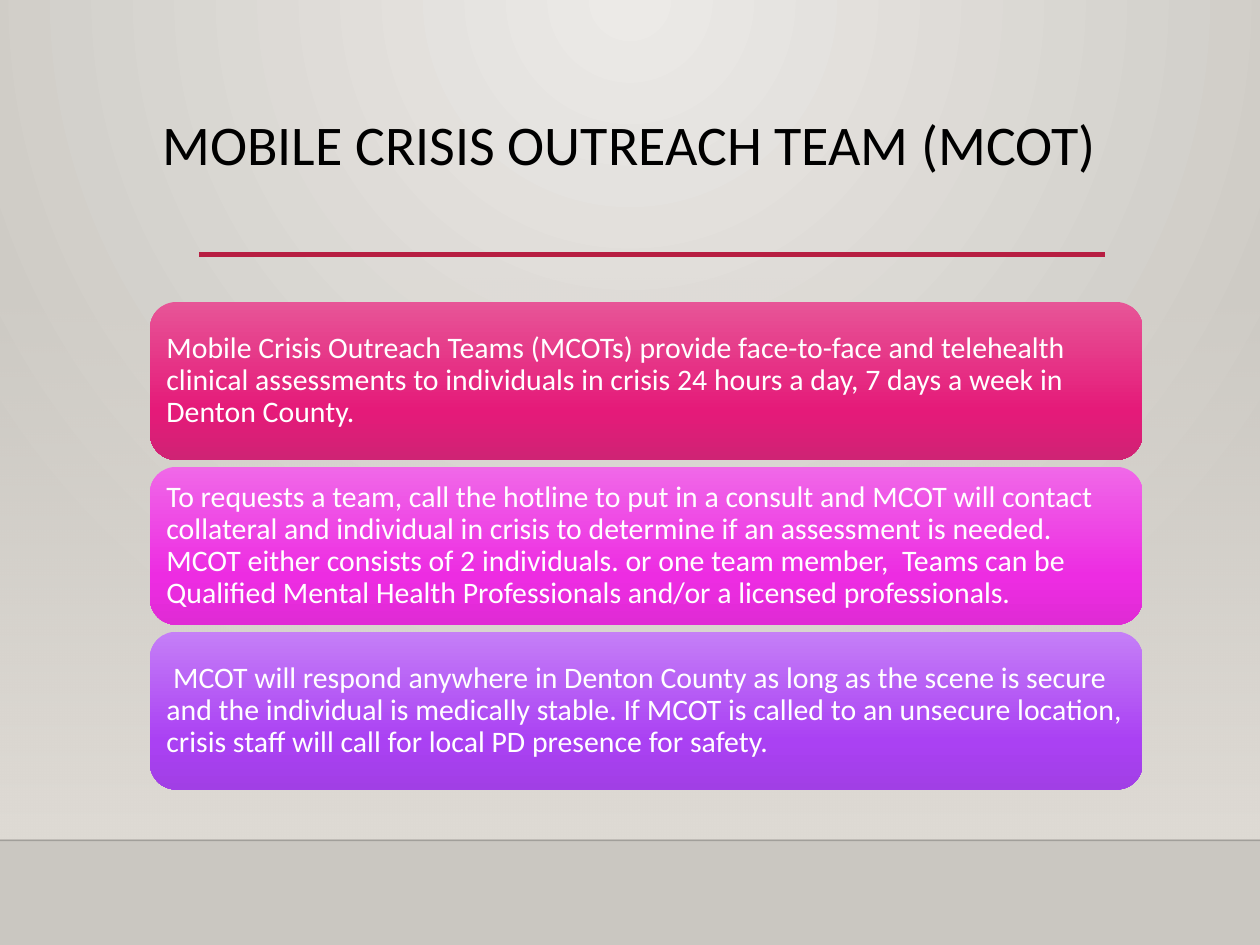
from lxml import etree
from pptx import Presentation
from pptx.dml.color import RGBColor
from pptx.enum.shapes import MSO_CONNECTOR, MSO_SHAPE
from pptx.enum.text import MSO_ANCHOR, PP_ALIGN
from pptx.oxml.ns import qn
from pptx.util import Pt

FONT = "Calibri"
BLACK = RGBColor(0x00, 0x00, 0x00)
WHITE = RGBColor(0xFF, 0xFF, 0xFF)
FLOOR_LINE = RGBColor(0x00, 0x00, 0x01)
RED = RGBColor(0xB7, 0x1E, 0x42)
GLOW = RGBColor(0xEC, 0xEA, 0xE7)
GREY = RGBColor(0xCA, 0xC7, 0xC1)
WALL = RGBColor(0xDF, 0xDB, 0xD5)
PINKS = [RGBColor(0xE7, 0x55, 0x97), RGBColor(0xE5, 0x1A, 0x79), RGBColor(0xCF, 0x23, 0x74)]
MAGENTAS = [RGBColor(0xF0, 0x68, 0xE8), RGBColor(0xED, 0x2C, 0xE2), RGBColor(0xE0, 0x2B, 0xD5)]
PURPLES = [RGBColor(0xC5, 0x7F, 0xF7), RGBColor(0xAA, 0x41, 0xF3), RGBColor(0xA1, 0x3F, 0xE5)]


def set_gradient(fill, owner, stops, circle=False):
    """Fill with (position %, colour, opacity %) stops, downwards or as a circle."""
    fill.gradient()
    gradient = owner.find(".//" + qn("a:gradFill"))
    for child in list(gradient):
        gradient.remove(child)
    stop_list = etree.SubElement(gradient, qn("a:gsLst"))
    for position, color, opacity in stops:
        stop = etree.SubElement(stop_list, qn("a:gs"), pos=str(position * 1000))
        srgb = etree.SubElement(stop, qn("a:srgbClr"), val=str(color))
        if opacity < 100:
            etree.SubElement(srgb, qn("a:alpha"), val=str(opacity * 1000))
    if circle:
        path = etree.SubElement(gradient, qn("a:path"), path="circle")
        etree.SubElement(path, qn("a:fillToRect"), l="43000", t="0", r="43000", b="100000")
    else:
        etree.SubElement(gradient, qn("a:lin"), ang="5400000", scaled="0")


def add_rule(left, right, y, color, width):
    rule = slide.shapes.add_connector(MSO_CONNECTOR.STRAIGHT, Pt(left), Pt(y), Pt(right), Pt(y))
    rule.line.color.rgb = color
    rule.line.width = Pt(width)
    etree.SubElement(rule._element.spPr, qn("a:effectLst"))
    return rule


prs = Presentation()
prs.slide_width, prs.slide_height = Pt(720), Pt(540)
slide = prs.slides.add_slide(prs.slide_layouts[6])

# Backdrop: round glow, wall fading in, floor line
set_gradient(slide.background.fill, slide._element,
             [(0, GLOW, 100), (100, GREY, 100)], circle=True)
wall = slide.shapes.add_shape(MSO_SHAPE.RECTANGLE, 0, Pt(158.5), Pt(720), Pt(321.5))
wall.shadow.inherit = False
wall.line.fill.background()
set_gradient(wall.fill, wall._element, [(0, WALL, 0), (100, WALL, 100)])
floor = add_rule(0, 720, 480.2, FLOOR_LINE, 1)
floor_color = floor._element.spPr.find(".//" + qn("a:srgbClr"))
etree.SubElement(floor_color, qn("a:alpha"), val="20000")

# Title and its rule
add_rule(113.8, 631.2, 145.4, RED, 2.5)
title = slide.shapes.add_textbox(Pt(85.7), Pt(63.4), Pt(567.3), Pt(82.8)).text_frame
title.word_wrap = True
heading = title.paragraphs[0]
heading.text = "MOBILE CRISIS OUTREACH TEAM (MCOT)"
heading.line_spacing = 0.9
heading.font.name = FONT
heading.font.size = Pt(32)
heading.font.color.rgb = BLACK

# Three stacked cards
cards = [
    (PINKS, "Mobile Crisis Outreach Teams (MCOTs) provide face-to-face and telehealth "
            "clinical assessments to individuals in crisis 24 hours a day, 7 days a week "
            "in Denton County."),
    (MAGENTAS, "To requests a team, call the hotline to put in a consult and MCOT will "
               "contact collateral and individual in crisis to determine if an assessment "
               "is needed. MCOT either consists of 2 individuals. or one team member,  "
               "Teams can be Qualified Mental Health Professionals and/or a licensed "
               "professionals."),
    (PURPLES, " MCOT will respond anywhere in Denton County as long as the scene is secure "
              "and the individual is medically stable. If MCOT is called to an unsecure "
              "location, crisis staff will call for local PD presence for safety."),
]
CARD_TOP, CARD_HEIGHT, CARD_STEP = 172.6, 90.2, 94.2
for row, (shades, statement) in enumerate(cards):
    card = slide.shapes.add_shape(MSO_SHAPE.ROUNDED_RECTANGLE, Pt(85.7),
                                  Pt(CARD_TOP + row * CARD_STEP), Pt(567.3), Pt(CARD_HEIGHT))
    card.shadow.inherit = False
    card.line.fill.background()
    set_gradient(card.fill, card._element,
                 [(position, shade, 100) for position, shade in zip((0, 69, 100), shades)])
    frame = card.text_frame
    frame.word_wrap = True
    frame.vertical_anchor = MSO_ANCHOR.MIDDLE
    frame.margin_left = frame.margin_right = frame.margin_top = frame.margin_bottom = Pt(5)
    paragraph = frame.paragraphs[0]
    paragraph.text = statement
    paragraph.alignment = PP_ALIGN.LEFT
    paragraph.line_spacing = 0.9
    paragraph.font.name = FONT
    paragraph.font.size = Pt(17)
    paragraph.font.color.rgb = WHITE

prs.save("out.pptx")
